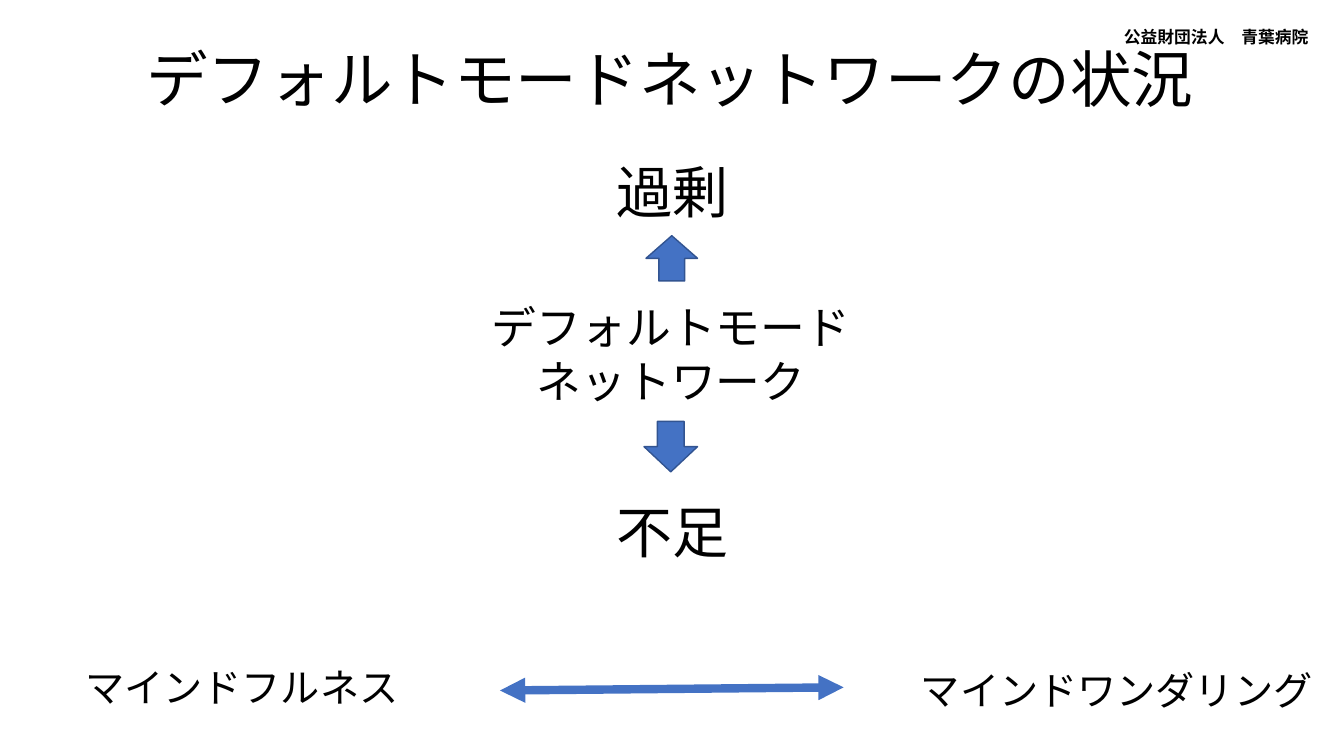
from lxml import etree
from pptx import Presentation
from pptx import util as u
from pptx.dml.color import RGBColor
from pptx.enum import shapes, text
from pptx.oxml.ns import qn

COLOURS = {"text": "000000", "arrow": "4472C4", "outline": "325491"}
JAPANESE_FONT = "Noto Sans CJK JP"
LEFT, CENTRE, RIGHT = text.PP_ALIGN.LEFT, text.PP_ALIGN.CENTER, text.PP_ALIGN.RIGHT


def colour(name):
    return RGBColor.from_string(COLOURS[name])


def lengths(values):
    return [u.Cm(value) for value in values]


class NetworkSlide:
    def __init__(self, deck):
        self.page = deck.slides.add_slide(deck.slide_layouts[5])

    def set_text(self, frame, words, size, align, font=JAPANESE_FONT, bold=False):
        para = frame.paragraphs[0]
        para.text = words
        para.alignment = align
        para.font.size = u.Pt(size)
        para.font.bold = bold
        para.font.color.rgb = colour("text")
        para.font.name = font
        defaults = para._p.pPr.find(qn("a:defRPr"))
        etree.SubElement(defaults, qn("a:ea"), typeface=JAPANESE_FONT)
        return para

    def title(self, words, place):
        box = self.page.shapes.title
        box.left, box.top, box.width, box.height = lengths(place)
        box.text_frame.vertical_anchor = text.MSO_ANCHOR.MIDDLE
        self.set_text(box.text_frame, words, 44, CENTRE).line_spacing = 0.9

    def label(self, words, place, size, align=LEFT, wrap=False, **style):
        frame = self.page.shapes.add_textbox(*lengths(place)).text_frame
        frame.word_wrap = wrap
        frame.auto_size = text.MSO_AUTO_SIZE.SHAPE_TO_FIT_TEXT
        self.set_text(frame, words, size, align, **style)

    def block_arrow(self, kind, place):
        arrow = self.page.shapes.add_shape(kind, *lengths(place))
        arrow.shadow.inherit = False
        arrow.fill.solid()
        arrow.fill.fore_color.rgb = colour("arrow")
        arrow.line.color.rgb = colour("outline")
        arrow.line.width = u.Pt(1)

    def double_arrow(self, ends):
        arrow = self.page.shapes.add_connector(
            shapes.MSO_CONNECTOR.STRAIGHT, *lengths(ends))
        arrow.line.color.rgb = colour("arrow")
        arrow.line.width = u.Pt(6)
        properties = arrow._element.spPr
        for end in ("a:headEnd", "a:tailEnd"):
            etree.SubElement(properties.find(qn("a:ln")), qn(end), type="triangle")
        etree.SubElement(properties, qn("a:effectLst"))


def main():
    deck = Presentation()
    deck.slide_width, deck.slide_height = u.Cm(33.87), u.Cm(19.05)
    slide = NetworkSlide(deck)

    slide.title("デフォルトモードネットワークの状況", (2.29, 0.66, 29.21, 2.82))
    slide.label("公益財団法人　青葉病院", (28.02, 0.56, 5.21, 0.76), 12, RIGHT,
                wrap=True, font="Arial", bold=True)

    slide.label("デフォルトモードネットワーク", (11.71, 7.44, 10.41, 3), 32, CENTRE,
                wrap=True)
    for words, top in (("過剰", 3.84), ("不足", 12.42)):
        slide.label(words, (15.29, top, 3.35, 1.96), 40)
    slide.block_arrow(shapes.MSO_SHAPE.UP_ARROW, (16.28, 5.94, 1.3, 1.14))
    slide.block_arrow(shapes.MSO_SHAPE.DOWN_ARROW, (16.23, 10.62, 1.35, 1.27))

    slide.label("マインドフルネス", (1.9, 16.59, 8.48, 1.45), 28)
    slide.label("マインドワンダリング", (22.96, 16.66, 10.41, 1.45), 28, wrap=True)
    slide.double_arrow((12.6, 17.4, 21.26, 17.32))

    deck.save("out.pptx")


if __name__ == "__main__":
    main()
